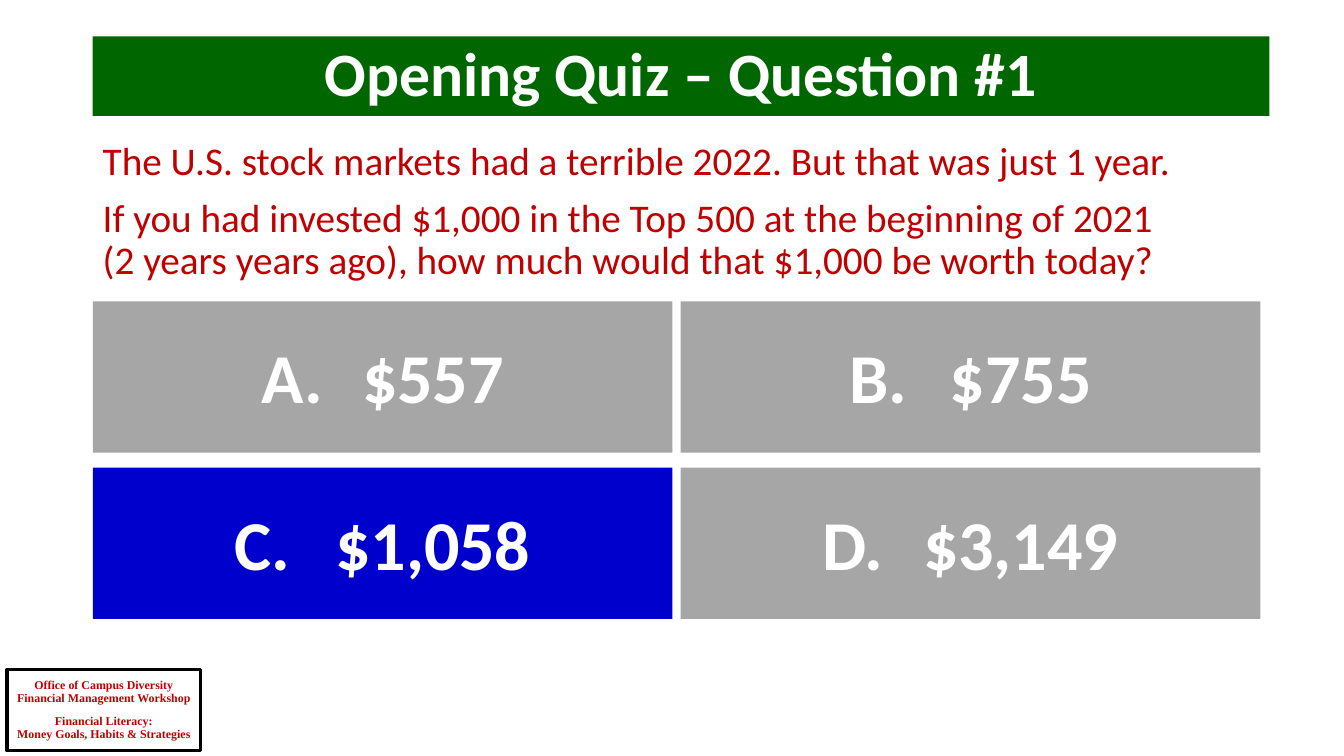
from pptx import Presentation
from pptx.dml.color import RGBColor
from pptx.enum.shapes import MSO_SHAPE as Shape
from pptx.enum.text import MSO_ANCHOR as Anchor, PP_ALIGN as Align
from pptx.util import Inches, Pt

COLORS = {
    "title": "006600", "answer": "A6A6A6", "correct": "0000CC",
    "white": "FFFFFF", "red": "C00000", "black": "000000",
}


def color(name):
    return RGBColor.from_string(COLORS[name])


def write(shape, texts, font, ink, align=Align.CENTER, anchor=Anchor.MIDDLE, gap=0):
    """Fill a shape with paragraphs that share one format."""
    frame = shape.text_frame
    frame.word_wrap = True
    frame.vertical_anchor = anchor
    for index, text in enumerate(texts):
        paragraph = frame.add_paragraph() if index else frame.paragraphs[0]
        paragraph.text = text
        paragraph.alignment = align
        paragraph.line_spacing = 0.9
        paragraph.space_before = Pt(gap if index else 0)
        for run in paragraph.runs:
            for name, value in font.items():
                setattr(run.font, name, value)
            run.font.color.rgb = color(ink)


presentation = Presentation()
presentation.slide_width = Inches(13.33)
presentation.slide_height = Inches(7.5)
slide = presentation.slides.add_slide(presentation.slide_layouts[6])
shapes = slide.shapes

# Workshop label
label = shapes.add_shape(Shape.RECTANGLE, Inches(0.07), Inches(6.64), Inches(1.92), Inches(0.81))
label.shadow.inherit = False
label.fill.background()
label.line.color.rgb = color("black")
label.line.width = Pt(2.25)
label.text_frame.margin_left = label.text_frame.margin_right = Inches(0.05)
write(
    label,
    ["Office of Campus Diversity\vFinancial Management Workshop",
     "Financial Literacy:\vMoney Goals, Habits & Strategies"],
    {"name": "Times New Roman", "size": Pt(8.5), "bold": True}, "red", gap=7,
)

# Title bar
title = shapes.add_shape(Shape.RECTANGLE, Inches(0.92), Inches(0.36), Inches(11.67), Inches(0.79))
title.shadow.inherit = False
title.fill.solid()
title.fill.fore_color.rgb = color("title")
title.line.fill.background()
write(title, ["Opening Quiz – Question #1"],
      {"name": "Calibri", "size": Pt(44), "bold": True}, "white")

# Question
question = shapes.add_textbox(Inches(0.92), Inches(1.36), Inches(11.88), Inches(1.6))
write(
    question,
    ["The U.S. stock markets had a terrible 2022. But that was just 1 year.",
     "If you had invested $1,000 in the Top 500 at the beginning of 2021\v"
     "(2 years years ago), how much would that $1,000 be worth today?"],
    {"name": "Calibri", "size": Pt(28)}, "red", Align.LEFT, Anchor.TOP, gap=10,
)

# Answer grid, two by two
answers = ["A.\t$557", "B.\t$755", "C.\t$1,058", "D.\t$3,149"]
for index, answer in enumerate(answers):
    row, column = divmod(index, 2)
    tile = shapes.add_shape(
        Shape.RECTANGLE, Inches(0.92 + column * 5.83), Inches(2.99 + row * 1.65),
        Inches(5.75), Inches(1.5))
    tile.shadow.inherit = False
    tile.fill.solid()
    tile.fill.fore_color.rgb = color("correct" if answer.startswith("C") else "answer")
    tile.line.fill.background()
    tile.text_frame.margin_top = Inches(0.13)
    write(tile, [answer], {"name": "Calibri", "size": Pt(50), "bold": True}, "white")

presentation.save("out.pptx")
